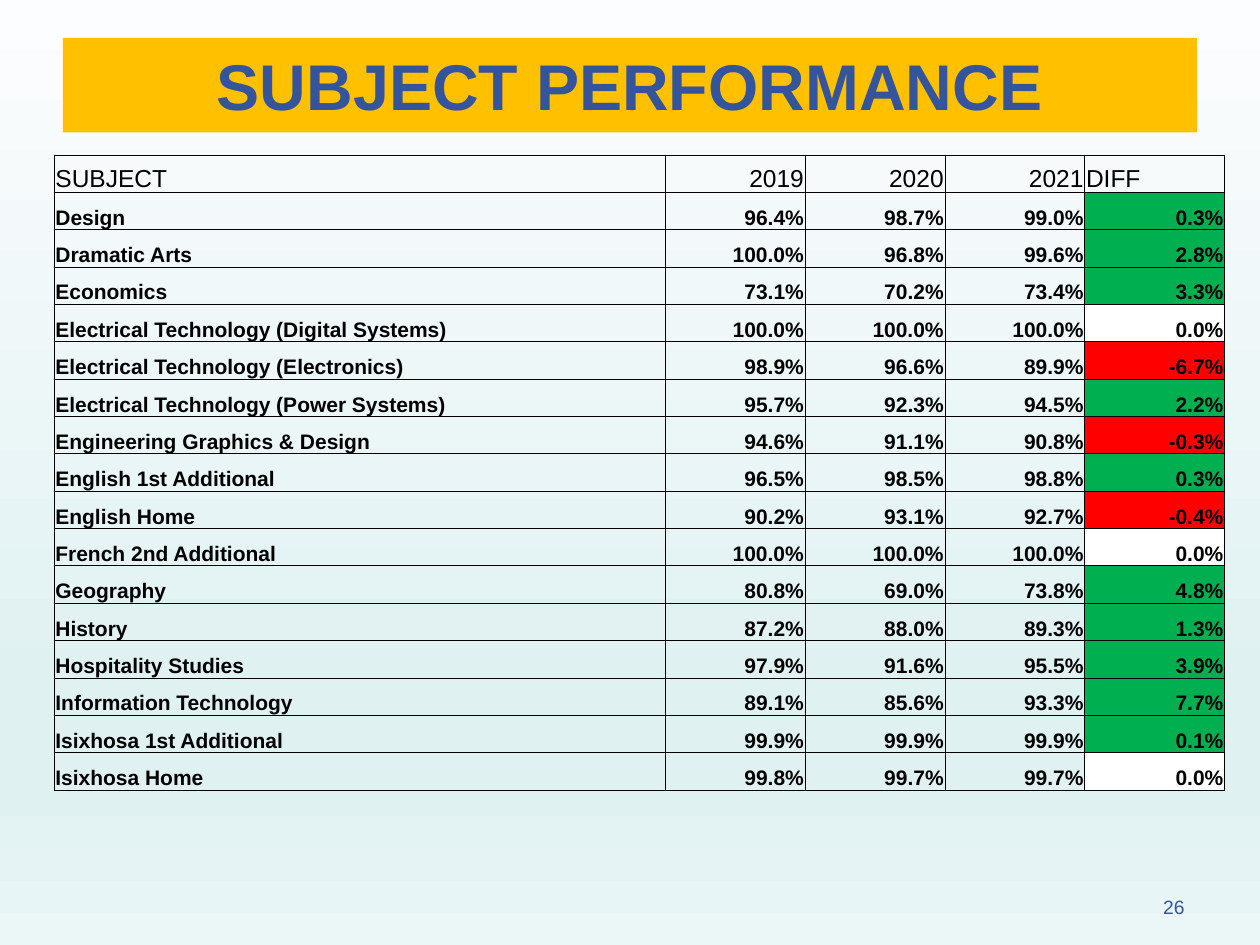
import pptx
import pptx.util
import pptx.dml.color
import pptx.enum.shapes
import pptx.enum.text
import pptx.oxml.ns
import lxml.etree

THEME = {
    "font": "Arial",
    "blue": "34549C", "gold": "FFC000", "ink": "000000",
    "up": "00B050", "down": "FF0000", "level": "FFFFFF",
    "background": [(0, "FCFDFE"), (74, "E0F1F2"), (83, "E0F1F2"), (100, "EBF6F7")],
    "title": 36.9, "header": 14, "body": 12, "number": 11, "border": 0.5,
}
HEADER = ["SUBJECT", "2019", "2020", "2021", "DIFF"]
RESULTS = [
    ("Design", 96.4, 98.7, 99.0, 0.3),
    ("Dramatic Arts", 100.0, 96.8, 99.6, 2.8),
    ("Economics", 73.1, 70.2, 73.4, 3.3),
    ("Electrical Technology (Digital Systems)", 100.0, 100.0, 100.0, 0.0),
    ("Electrical Technology (Electronics)", 98.9, 96.6, 89.9, -6.7),
    ("Electrical Technology (Power Systems)", 95.7, 92.3, 94.5, 2.2),
    ("Engineering Graphics & Design", 94.6, 91.1, 90.8, -0.3),
    ("English 1st Additional", 96.5, 98.5, 98.8, 0.3),
    ("English Home", 90.2, 93.1, 92.7, -0.4),
    ("French 2nd Additional", 100.0, 100.0, 100.0, 0.0),
    ("Geography", 80.8, 69.0, 73.8, 4.8),
    ("History", 87.2, 88.0, 89.3, 1.3),
    ("Hospitality Studies", 97.9, 91.6, 95.5, 3.9),
    ("Information Technology", 89.1, 85.6, 93.3, 7.7),
    ("Isixhosa 1st Additional", 99.9, 99.9, 99.9, 0.1),
    ("Isixhosa Home", 99.8, 99.7, 99.7, 0.0),
]
ALIGN = pptx.enum.text.PP_ALIGN
ANCHOR = pptx.enum.text.MSO_ANCHOR
Inches, Pt = pptx.util.Inches, pptx.util.Pt
rgb = pptx.dml.color.RGBColor.from_string
qn = pptx.oxml.ns.qn


def add_run(p, text, size, color, bold=False, align=ALIGN.LEFT):
    p.alignment = align
    r = p.add_run()
    r.text = text
    r.font.name = THEME["font"]
    r.font.size = Pt(size)
    r.font.bold = bold
    r.font.color.rgb = rgb(color)


def add_borders(cell):
    tc_pr = cell._tc.get_or_add_tcPr()
    for i, side in enumerate(("a:lnL", "a:lnR", "a:lnT", "a:lnB")):
        ln = lxml.etree.Element(qn(side), w=str(Pt(THEME["border"])))
        fill = lxml.etree.SubElement(ln, qn("a:solidFill"))
        lxml.etree.SubElement(fill, qn("a:srgbClr"), val=THEME["ink"])
        tc_pr.insert(i, ln)


prs = pptx.Presentation()
prs.slide_width, prs.slide_height = Inches(10), Inches(7.5)
W, H = prs.slide_width, prs.slide_height
s = prs.slides.add_slide(prs.slide_layouts[6])

# Background gradient, top to bottom
bg = s.background.fill
bg.gradient()
bg.gradient_angle = 270
stops = next(s._element.iter(qn("a:gsLst")))
for stop in list(stops):
    stops.remove(stop)
for share, color in THEME["background"]:
    stop = lxml.etree.SubElement(stops, qn("a:gs"), pos=str(share * 1000))
    lxml.etree.SubElement(stop, qn("a:srgbClr"), val=color)

# Title banner
sp = s.shapes.add_shape(pptx.enum.shapes.MSO_SHAPE.RECTANGLE,
                        int(W * 0.05), int(H * 0.04), int(W * 0.9), int(H * 0.1))
sp.shadow.inherit = False
sp.fill.solid()
sp.fill.fore_color.rgb = rgb(THEME["gold"])
sp.line.fill.background()
tf = sp.text_frame
tf.word_wrap = True
tf.vertical_anchor = ANCHOR.MIDDLE
add_run(tf.paragraphs[0], "SUBJECT PERFORMANCE", THEME["title"], THEME["blue"],
        bold=True, align=ALIGN.CENTER)

# Results table: one wide column and four equal ones
rows = [HEADER] + [[name] + [f"{v:.1f}%" for v in values] for name, *values in RESULTS]
columns = [Inches(4.85)] + [Inches(1.11)] * 4
table_height = Inches(5.04)
table = s.shapes.add_table(len(rows), len(columns), Inches(0.43), Inches(1.23),
                           sum(columns), table_height).table
table.first_row = table.horz_banding = False
for column, width in zip(table.columns, columns):
    column.width = width
for i, row in enumerate(rows):
    table.rows[i].height = table_height // len(rows)
    for j, text in enumerate(row):
        cell = table.cell(i, j)
        cell.margin_left = cell.margin_right = cell.margin_top = Inches(0.01)
        cell.margin_bottom = 0
        cell.vertical_anchor = ANCHOR.BOTTOM
        left = j == 0 or text == "DIFF"
        add_run(cell.text_frame.paragraphs[0], text,
                THEME["body"] if i else THEME["header"], THEME["ink"],
                bold=i > 0, align=ALIGN.LEFT if left else ALIGN.RIGHT)
        # Colour the change by its sign
        if i and j == len(columns) - 1:
            diff = RESULTS[i - 1][-1]
            trend = "up" if diff > 0 else "down" if diff < 0 else "level"
            cell.fill.solid()
            cell.fill.fore_color.rgb = rgb(THEME[trend])
        else:
            cell.fill.background()
        add_borders(cell)

# Page number
sp = s.shapes.add_textbox(Inches(7.17), Inches(7.08), Inches(2.33), Inches(0.27))
tf = sp.text_frame
tf.word_wrap = True
p = tf.paragraphs[0]
p.line_spacing = 0.9
p.space_after = Pt(6)
add_run(p, "26", THEME["number"], THEME["blue"], align=ALIGN.RIGHT)

prs.save("out.pptx")
